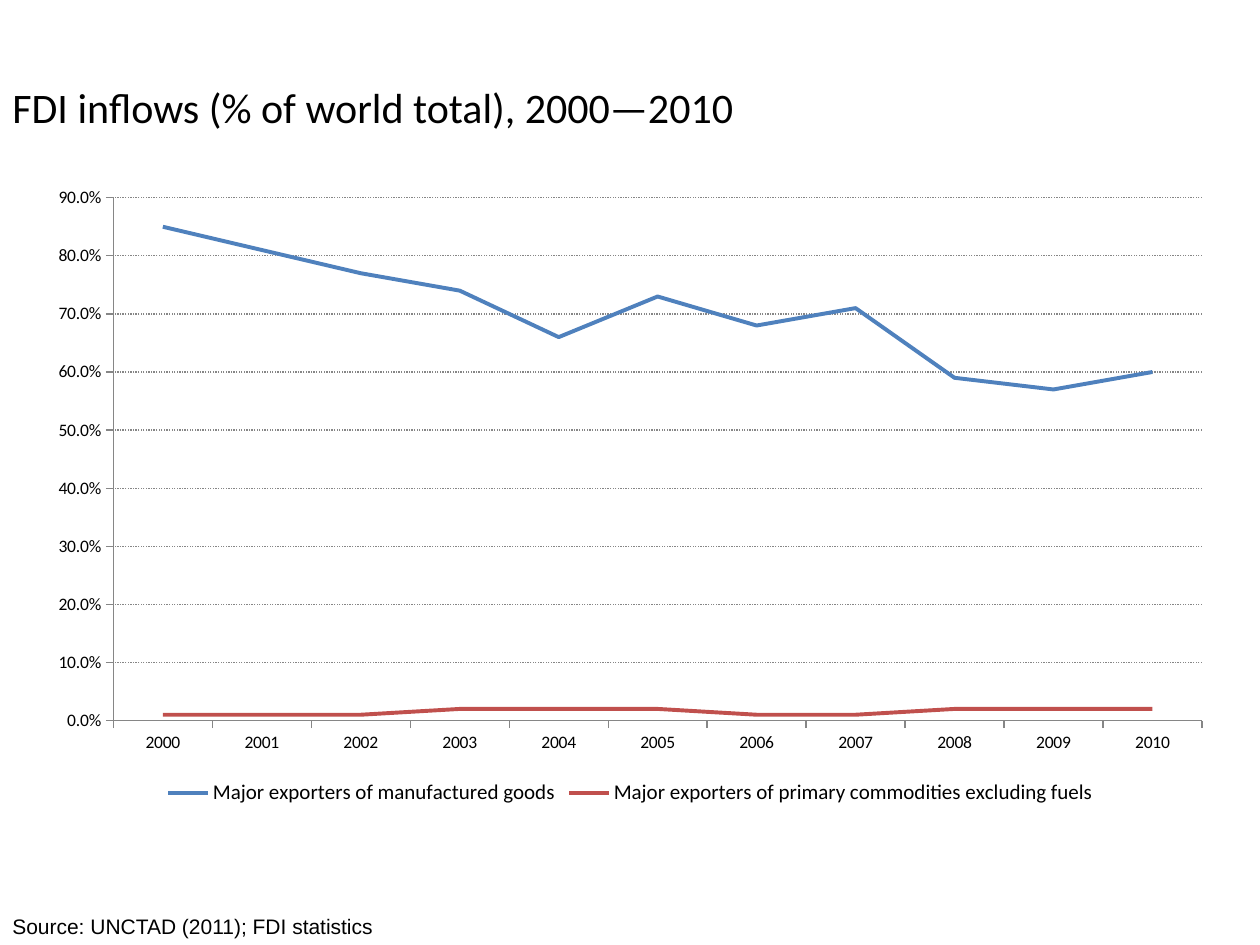
from dataclasses import dataclass

from lxml.etree import SubElement
from pptx import Presentation
from pptx.chart.data import CategoryChartData
from pptx.dml.color import RGBColor
from pptx.enum.chart import XL_CHART_TYPE, XL_LEGEND_POSITION, XL_TICK_MARK
from pptx.enum.dml import MSO_LINE
from pptx.enum.text import MSO_ANCHOR
from pptx.oxml.ns import qn
from pptx.util import Inches, Pt


@dataclass(frozen=True)
class Theme:
    text: RGBColor = RGBColor(0x00, 0x00, 0x00)
    axis: RGBColor = RGBColor(0x86, 0x86, 0x86)
    series: tuple = (RGBColor(0x4F, 0x81, 0xBD), RGBColor(0xC0, 0x50, 0x4D))
    main_font: str = "Calibri"
    source_font: str = "Arial"
    title_size: Pt = Pt(24)
    note_size: Pt = Pt(12)
    axis_size: Pt = Pt(10)
    series_width: Pt = Pt(2.25)
    axis_width: Pt = Pt(0.75)


THEME = Theme()
YEARS = [str(year) for year in range(2000, 2011)]
INFLOWS = {
    "Major exporters of manufactured goods": (
        0.85, 0.81, 0.77, 0.74, 0.66, 0.73, 0.68, 0.71, 0.59, 0.57, 0.6,
    ),
    "Major exporters of primary commodities excluding fuels": (
        0.01, 0.01, 0.01, 0.02, 0.02, 0.02, 0.01, 0.01, 0.02, 0.02, 0.02,
    ),
}


def style_font(font, name, size):
    font.name = name
    font.size = size
    font.color.rgb = THEME.text


def add_text(page, text, left, top, width, height, name, size):
    box = page.shapes.add_textbox(Inches(left), Inches(top), Inches(width), Inches(height))
    frame = box.text_frame
    frame.word_wrap = True
    frame.vertical_anchor = MSO_ANCHOR.TOP
    span = frame.paragraphs[0].add_run()
    span.text = text
    style_font(span.font, name, size)


def style_axis(axis):
    axis.major_tick_mark = XL_TICK_MARK.OUTSIDE
    axis.minor_tick_mark = XL_TICK_MARK.NONE
    axis.format.line.color.rgb = THEME.axis
    axis.format.line.width = THEME.axis_width
    style_font(axis.tick_labels.font, THEME.main_font, THEME.axis_size)


def place_plot(chart, fractions):
    plot_area = chart.plots[0]._element.getparent()
    layout = plot_area.find(qn("c:layout"))
    if layout is None:
        layout = SubElement(plot_area, qn("c:layout"))
        plot_area.insert(0, layout)
    manual = SubElement(layout, qn("c:manualLayout"))
    settings = {"layoutTarget": "inner", "xMode": "edge", "yMode": "edge", **fractions}
    for tag, value in settings.items():
        SubElement(manual, qn(f"c:{tag}")).set("val", str(value))


def add_line_chart(page, left, top, width, height):
    data = CategoryChartData(number_format="0.0%")
    data.categories = YEARS
    for name, values in INFLOWS.items():
        data.add_series(name, values)
    chart = page.shapes.add_chart(
        XL_CHART_TYPE.LINE, Inches(left), Inches(top), Inches(width), Inches(height), data
    ).chart
    style_font(chart.font, THEME.main_font, THEME.axis_size)
    chart.has_title = False
    chart.plots[0].vary_by_categories = False
    for series, color in zip(chart.plots[0].series, THEME.series):
        series.smooth = False
        series.format.line.color.rgb = color
        series.format.line.width = THEME.series_width

    style_axis(chart.category_axis)
    values_axis = chart.value_axis
    style_axis(values_axis)
    values_axis.minimum_scale = 0
    values_axis.maximum_scale = 0.9
    values_axis.major_unit = 0.1
    values_axis.tick_labels.number_format = "0.0%"
    values_axis.tick_labels.number_format_is_linked = False
    values_axis.has_major_gridlines = True
    grid = values_axis.major_gridlines.format.line
    grid.color.rgb = THEME.axis
    grid.width = THEME.axis_width
    grid.dash_style = MSO_LINE.ROUND_DOT

    chart.has_legend = True
    chart.legend.position = XL_LEGEND_POSITION.BOTTOM
    chart.legend.include_in_layout = False
    style_font(chart.legend.font, THEME.main_font, THEME.note_size)
    place_plot(
        chart,
        {"x": 0.62 / width, "y": 0.18 / height, "w": 8.64 / width, "h": 4.15 / height},
    )


def main():
    deck = Presentation()
    deck.slide_width = Inches(10)
    deck.slide_height = Inches(7.5)
    page = deck.slides.add_slide(deck.slide_layouts[6])
    add_text(page, "FDI inflows (% of world total), 2000—2010",
             0, 0.6, 9.45, 0.55, THEME.main_font, THEME.title_size)
    add_text(page, "Source: UNCTAD (2011); FDI statistics",
             0, 7.2, 3.54, 0.3, THEME.source_font, THEME.note_size)
    add_line_chart(page, 0.28, 1.39, 9.45, 5.04)
    deck.save("out.pptx")


if __name__ == "__main__":
    main()
